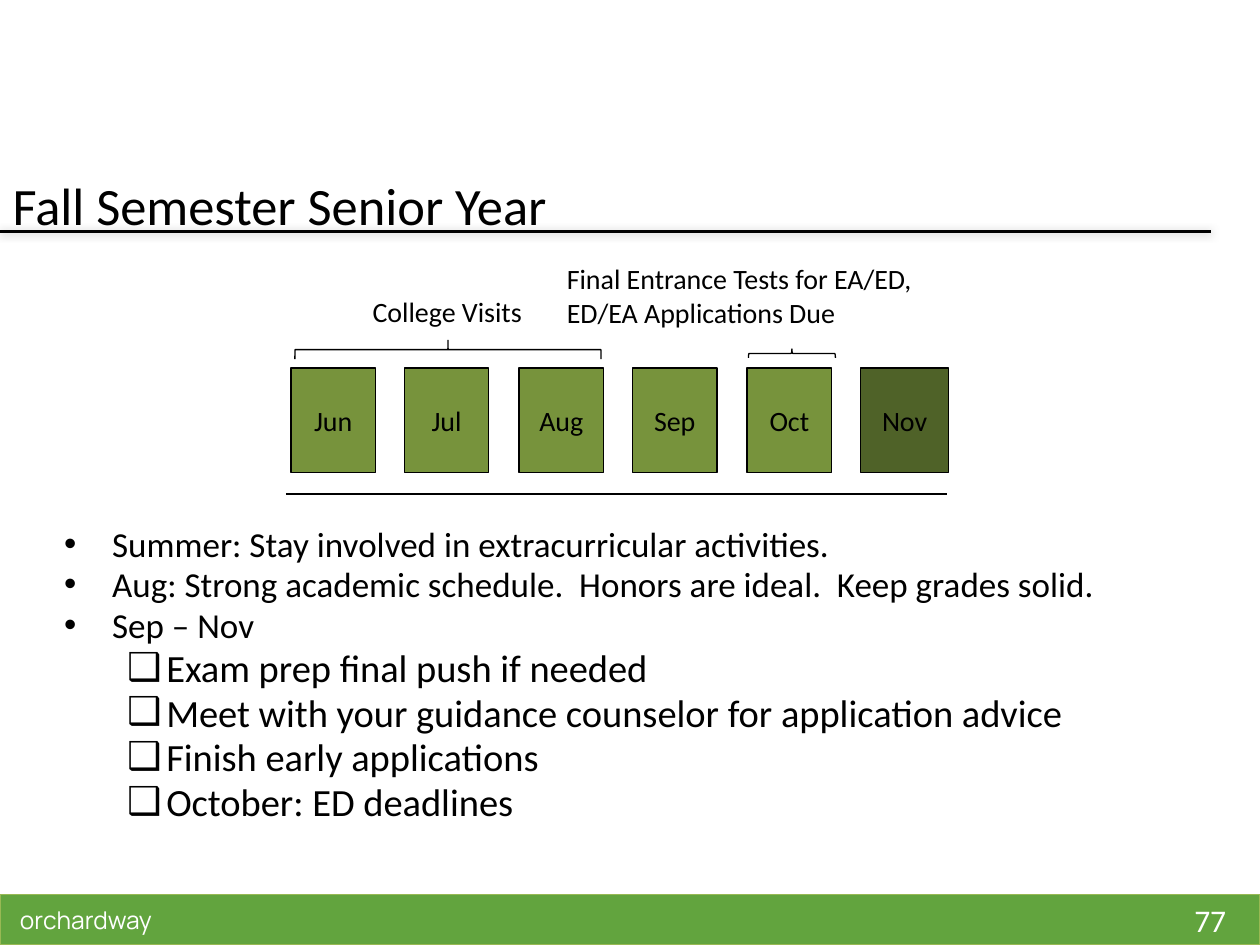
from typing import Any, NamedTuple

from lxml.etree import SubElement
from pptx import Presentation
from pptx.dml.color import RGBColor
from pptx.enum.shapes import MSO_CONNECTOR, MSO_SHAPE
from pptx.enum.text import MSO_ANCHOR, MSO_AUTO_SIZE, PP_ALIGN
from pptx.oxml.ns import qn
from pptx.util import Emu, Pt

EMU_PER_PX = 9144
BLACK, WHITE = "000000", "FFFFFF"
MONTH_GREEN, NOVEMBER_GREEN = "77933C", "4F6228"


class Box(NamedTuple):
    """Position and size in px, 100 to the inch."""
    left: int
    top: int
    width: int
    height: int


class Label(NamedTuple):
    """Lines of text with their place and format."""
    box: Box
    lines: list[str]
    size: int = 16
    color: str = BLACK
    font: str = "Calibri"
    align: PP_ALIGN = PP_ALIGN.LEFT
    anchor: MSO_ANCHOR = MSO_ANCHOR.TOP


class Brace(NamedTuple):
    """A brace turned to point upwards."""
    box: Box
    curve: float


class Level(NamedTuple):
    """Format of one list level."""
    bullet: str
    size: int
    margin: int
    hang: int
    space: float


LEVELS = [Level("•", 20, 38, 38, 4), Level("❑", 22, 81, 31, 4.4)]
ADVICE = [
    (0, "Summer: Stay involved in extracurricular activities."),
    (0, "Aug: Strong academic schedule.  Honors are ideal.  Keep grades solid."),
    (0, "Sep – Nov"),
    (1, "Exam prep final push if needed"),
    (1, "Meet with your guidance counselor for application advice"),
    (1, "Finish early applications"),
    (1, "October: ED deadlines"),
]
FOOTER_LABELS = [
    Label(Box(921, 710, 79, 40), ["77"], 18, WHITE,
          align=PP_ALIGN.CENTER, anchor=MSO_ANCHOR.MIDDLE),
    Label(Box(6, 710, 140, 40), ["orchardway"], 14, WHITE, "Manrope",
          anchor=MSO_ANCHOR.MIDDLE),
]
TIMELINE_LABELS = [
    Label(Box(440, 203, 372, 64),
          ["Final Entrance Tests for EA/ED,", "ED/EA Applications Due"]),
    Label(Box(270, 229, 170, 37), ["College Visits"], align=PP_ALIGN.CENTER),
]
BRACES = [Brace(Box(625, 246, 7, 69), 0.083), Brace(Box(348, 156, 15, 243), 0.01)]
MONTHS = ["Jun", "Jul", "Aug", "Sep", "Oct", "Nov"]
FIRST_MONTH_LEFT, MONTH_PITCH = 231, 90.4


def px(length: int) -> Emu:
    """Turn px into EMU."""
    return Emu(length * EMU_PER_PX)


def rgb(color: str) -> RGBColor:
    """Turn a hex string into a colour."""
    return RGBColor.from_string(color)


def apply(target: Any, values: dict[str, Any]) -> None:
    """Set every attribute named in values."""
    for name, value in values.items():
        setattr(target, name, value)


def place(shape: Any, box: Box) -> None:
    """Move and size a shape."""
    apply(shape, {name: px(value) for name, value in box._asdict().items()})


def write(paragraph: Any, text: str, size: int, color: str = BLACK,
          font: str = "Calibri") -> None:
    """Add one formatted run."""
    run = paragraph.add_run()
    run.text = text
    apply(run.font, {"size": Pt(size), "name": font})
    run.font.color.rgb = rgb(color)


def fill_label(shape: Any, label: Label) -> None:
    """Write a label into a shape."""
    frame = shape.text_frame
    apply(frame, {"word_wrap": True, "vertical_anchor": label.anchor,
                  "auto_size": MSO_AUTO_SIZE.NONE})
    for index, line in enumerate(label.lines):
        paragraph = frame.add_paragraph() if index else frame.paragraphs[0]
        paragraph.alignment = label.align
        write(paragraph, line, label.size, label.color, label.font)


def add_label(slide: Any, label: Label) -> None:
    """Add a text box."""
    fill_label(slide.shapes.add_textbox(*map(px, label.box)), label)


def add_block(slide: Any, box: Box, fill: str, outline: str) -> Any:
    """Add a filled rectangle."""
    block = slide.shapes.add_shape(MSO_SHAPE.RECTANGLE, *map(px, box))
    block.shadow.inherit = False
    block.fill.solid()
    block.fill.fore_color.rgb = rgb(fill)
    block.line.color.rgb = rgb(outline)
    block.line.width = Pt(0.75)
    return block


def add_rule(slide: Any, left: int, right: int, y: int, width: float) -> Any:
    """Add a horizontal line and return its effect list."""
    rule = slide.shapes.add_connector(
        MSO_CONNECTOR.STRAIGHT, px(left), px(y), px(right), px(y))
    rule.line.color.rgb = rgb(BLACK)
    rule.line.width = Pt(width)
    return SubElement(rule._element.spPr, qn("a:effectLst"))


def add_shadow(effects: Any) -> None:
    """Put a soft downward shadow in an effect list."""
    shadow = SubElement(effects, qn("a:outerShdw"), blurRad=str(Pt(5)),
                        dist=str(Pt(0.5)), dir="5400000", rotWithShape="0")
    tint = SubElement(shadow, qn("a:srgbClr"), val="808080")
    SubElement(tint, qn("a:alpha"), val="50000")


def add_brace(slide: Any, brace: Brace) -> None:
    """Add an upward brace."""
    shape = slide.shapes.add_shape(MSO_SHAPE.LEFT_BRACE, *map(px, brace.box))
    shape.shadow.inherit = False
    shape.rotation = 90
    shape.adjustments[0] = brace.curve
    shape.fill.background()
    shape.line.color.rgb = rgb(BLACK)
    shape.line.width = Pt(0.75)


def add_advice(frame: Any) -> None:
    """Write the two-level list."""
    apply(frame, {"word_wrap": True, "auto_size": MSO_AUTO_SIZE.NONE})
    for index, (depth, text) in enumerate(ADVICE):
        level = LEVELS[depth]
        paragraph = frame.add_paragraph() if index else frame.paragraphs[0]
        apply(paragraph, {"level": depth, "line_spacing": 0.8,
                          "space_before": Pt(level.space if index else 0)})
        props = paragraph._p.get_or_add_pPr()
        props.set("marL", str(px(level.margin)))
        props.set("indent", str(-px(level.hang)))
        tint = SubElement(props, qn("a:buClr"))
        SubElement(tint, qn("a:srgbClr"), val=BLACK)
        SubElement(props, qn("a:buFont"), typeface="Arial")
        SubElement(props, qn("a:buChar"), char=level.bullet)
        write(paragraph, text, level.size)


def main() -> None:
    """Build and save the slide."""
    deck = Presentation()
    apply(deck, {"slide_width": px(1000), "slide_height": px(750)})
    slide = deck.slides.add_slide(deck.slide_layouts[1])
    title, advice = slide.placeholders
    heading = Label(Box(0, 126, 900, 72), ["Fall Semester Senior Year"], 30,
                    anchor=MSO_ANCHOR.MIDDLE)
    place(title, heading.box)
    fill_label(title, heading)
    place(advice, Box(41, 416, 900, 340))
    add_advice(advice.text_frame)

    add_block(slide, Box(0, 710, 1000, 40), "62A43E", "98B954")
    add_shadow(add_rule(slide, 0, 961, 184, 1.5))
    add_rule(slide, 227, 752, 392, 0.75)
    for index, month in enumerate(MONTHS):
        last = month == MONTHS[-1]
        box = Box(round(FIRST_MONTH_LEFT + index * MONTH_PITCH), 292,
                  70 if last else 67, 83)
        block = add_block(slide, box, NOVEMBER_GREEN if last else MONTH_GREEN, BLACK)
        fill_label(block, Label(box, [month], align=PP_ALIGN.CENTER,
                                anchor=MSO_ANCHOR.MIDDLE))
    for label in FOOTER_LABELS + TIMELINE_LABELS:
        add_label(slide, label)
    for brace in BRACES:
        add_brace(slide, brace)
    deck.save("out.pptx")


if __name__ == "__main__":
    main()
